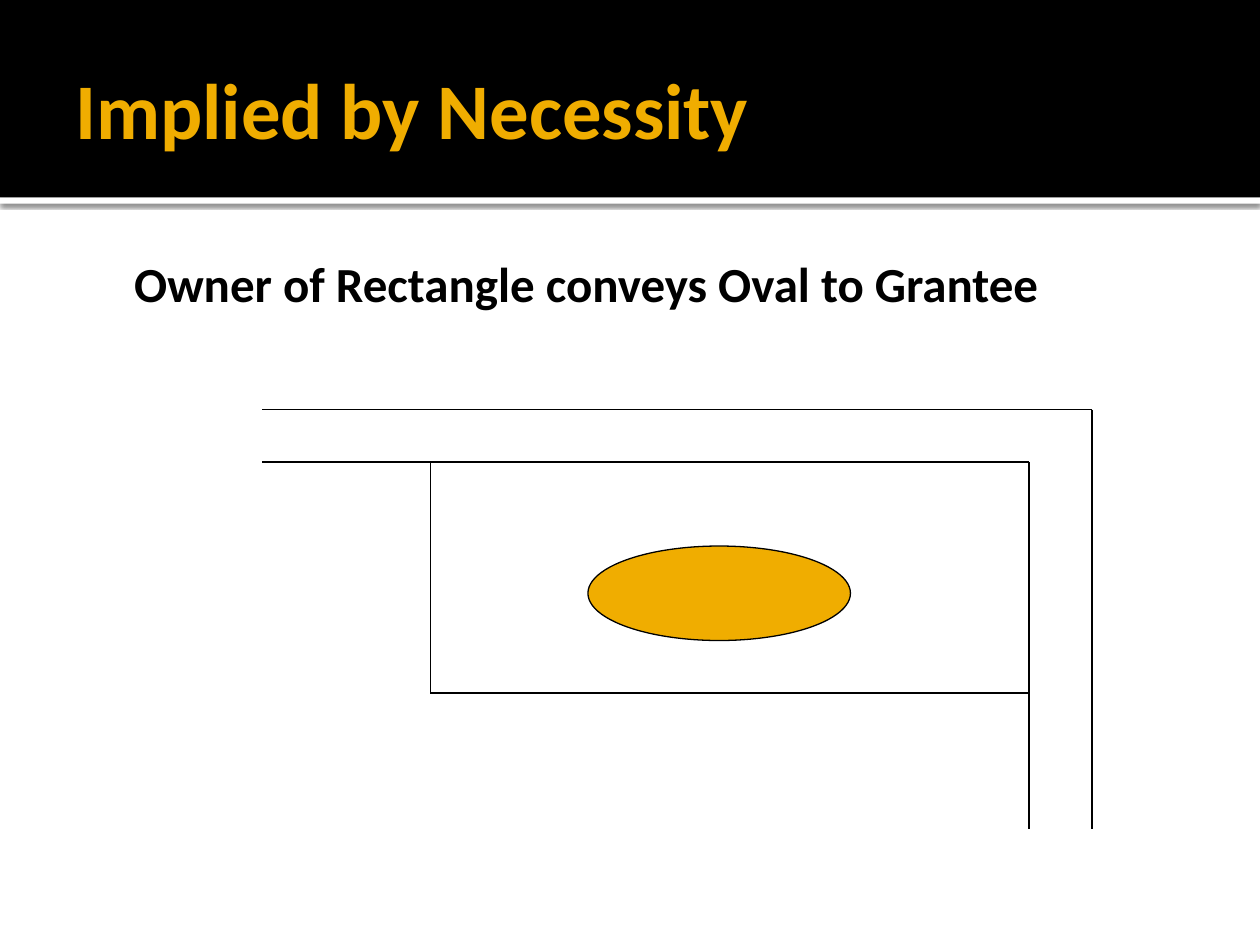
from lxml.etree import SubElement
from pptx import Presentation
from pptx.dml.color import RGBColor
from pptx.enum.shapes import MSO_CONNECTOR, MSO_SHAPE
from pptx.enum.text import MSO_ANCHOR
from pptx.oxml.ns import qn
from pptx.util import Inches, Pt

HUES = {"ink": "000000", "gold": "F0AD00", "paper": "FFFFFF"}
CELL = Inches(1) / 12


def grid(*cells):
    return [round(cell * CELL) for cell in cells]


def hue(name):
    return RGBColor.from_string(HUES[name])


def write(frame, text, size=28, color="ink", space=1.0):
    para = frame.paragraphs[0]
    para.line_spacing = space
    run = para.add_run()
    run.text = text
    font = run.font
    font.name = "Calibri"
    font.size = Pt(size)
    font.bold = True
    font.color.rgb = hue(color)


class Page:
    def __init__(self, slide, width=0.75):
        self.slide = slide
        self.width = Pt(width)

    def shape(self, kind, box, fill, edge=None):
        item = self.slide.shapes.add_shape(kind, *grid(*box))
        item.shadow.inherit = False
        item.fill.solid()
        item.fill.fore_color.rgb = hue(fill)
        if edge:
            item.line.color.rgb = hue(edge)
            item.line.width = self.width
        else:
            item.line.fill.background()
        return item

    def shade(self, item, blur=2.5, gap=0.8, alpha=60):
        effect = item._element.spPr.find(qn("a:effectLst"))
        outer = SubElement(effect, qn("a:outerShdw"), blurRad=str(Pt(blur)),
                           dist=str(Pt(gap)), dir="5400000",
                           algn="t", rotWithShape="0")
        color = SubElement(outer, qn("a:srgbClr"), val=HUES["ink"])
        SubElement(color, qn("a:alpha"), val=str(alpha * 1000))

    def line(self, *ends):
        item = self.slide.shapes.add_connector(MSO_CONNECTOR.STRAIGHT, *grid(*ends))
        item.line.color.rgb = hue("ink")
        item.line.width = self.width
        SubElement(item._element.spPr, qn("a:effectLst"))

    def text(self, box, text, inset, anchor=MSO_ANCHOR.TOP, **style):
        frame = self.slide.shapes.add_textbox(*grid(*box)).text_frame
        frame.word_wrap = True
        frame.vertical_anchor = anchor
        (frame.margin_left, frame.margin_top,
         frame.margin_right, frame.margin_bottom) = map(Inches, inset)
        write(frame, text, **style)


def main():
    deck = Presentation()
    deck.slide_width, deck.slide_height = grid(120, 90)
    page = Page(deck.slides.add_slide(deck.slide_layouts[6]))

    band = 18.8
    strip = page.shape(MSO_SHAPE.RECTANGLE, (0, band, 120, 0.6), "paper")
    page.shade(strip)
    page.shape(MSO_SHAPE.RECTANGLE, (0, 0, 120, band), "ink")
    page.text((6, 2, 108, 16.5), "Implied by Necessity", (0.1, 0.05, 0.05, 0.05),
              MSO_ANCHOR.MIDDLE, size=45, color="gold")
    page.text((10.5, 24, 102, 12), "Owner of Rectangle conveys Oval to Grantee",
              (0.19, 0.1, 0.1, 0.05), space=0.8)

    start, end = 25, 79
    for right, top in ((104, 39), (98, 44)):
        page.line(start, top, right, top)
        page.line(right, top, right, end)
    left, base = 41, 66
    page.line(left, top, left, base)
    page.line(left, base, right, base)
    page.shape(MSO_SHAPE.OVAL, (56, 52, 25, 9), "gold", "ink")

    deck.save("out.pptx")


if __name__ == "__main__":
    main()
